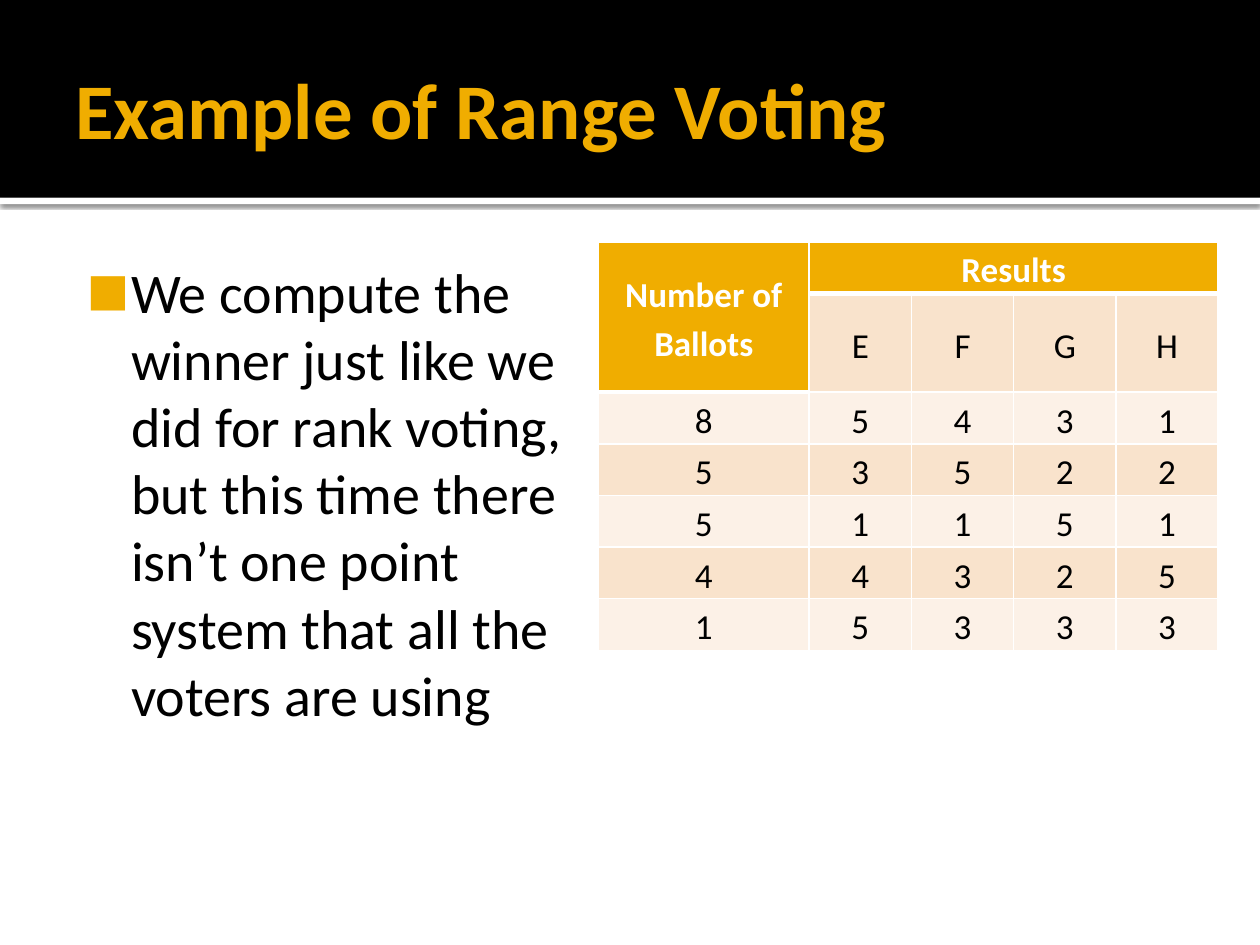
from dataclasses import dataclass
from typing import Any

import pptx
import pptx.dml.color
import pptx.enum.shapes
import pptx.enum.text
import pptx.oxml
import pptx.oxml.ns
import pptx.util

ALIGN = pptx.enum.text.PP_ALIGN
ANCHOR = pptx.enum.text.MSO_ANCHOR
RGB = pptx.dml.color.RGBColor.from_string
SLIDE_WIDTH = pptx.util.Inches(10)
SLIDE_HEIGHT = pptx.util.Inches(7.5)


@dataclass(frozen=True)
class Theme:
    font: str = "Calibri"
    accent: str = "F0AD00"
    dark: str = "000000"
    light: str = "FFFFFF"
    stripes: tuple[str, str] = ("FCF1E7", "F9E3CC")
    title_size: float = 45
    body_size: float = 32
    table_size: float = 20
    thin: float = 1
    thick: float = 3


@dataclass(frozen=True)
class Area:
    left: float
    top: float
    width: float
    height: float

    def emu(self) -> dict[str, int]:
        return {
            "left": round(self.left * SLIDE_WIDTH),
            "top": round(self.top * SLIDE_HEIGHT),
            "width": round(self.width * SLIDE_WIDTH),
            "height": round(self.height * SLIDE_HEIGHT),
        }


@dataclass(frozen=True)
class Band:
    area: Area
    color: str
    shadowed: bool


THEME = Theme()
HEADER_SHARE = 1.57 / 7.5
BANDS = (
    Band(Area(0, HEADER_SHARE, 1, 0.05 / 7.5), THEME.light, True),
    Band(Area(0, 0, 1, HEADER_SHARE), THEME.dark, False),
)
TITLE_AREA = Area(0.05, 0.17 / 7.5, 0.9, 1.37 / 7.5)
BODY_AREA = Area(0.05, 1.94 / 7.5, 0.892, 5.06 / 7.5)
TABLE_AREA = Area(0.475, 1.92 / 7.5, 0.492, 2.87 / 7.5)
COLUMN_SHARES = (0.34, 0.165, 0.165, 0.165, 0.165)

TITLE = "Example of Range Voting"
EXPLANATION = (
    "We compute the",
    "winner just like we",
    "did for rank voting,",
    "but this time there",
    "isn’t one point",
    "system that all the",
    "voters are using",
)
BALLOTS = (
    ("Number of Ballots", "Results", "", "", ""),
    ("", "E", "F", "G", "H"),
    ("8", "5", "4", "3", "1"),
    ("5", "3", "5", "2", "2"),
    ("5", "1", "1", "5", "1"),
    ("4", "4", "3", "2", "5"),
    ("1", "5", "3", "3", "3"),
)


def apply(target: Any, values: dict[str, Any]) -> None:
    for name, value in values.items():
        setattr(target, name, value)


def margins(left: float, top: float, right: float, bottom: float) -> dict[str, int]:
    sides = {"left": left, "top": top, "right": right, "bottom": bottom}
    return {f"margin_{side}": pptx.util.Inches(inset) for side, inset in sides.items()}


def element(markup: str) -> Any:
    return pptx.oxml.parse_xml(markup.replace(">", f" {pptx.oxml.ns.nsdecls('a')}>", 1))


def style_text(frame: Any, size: float, color: str, bold: bool, **layout: Any) -> None:
    for paragraph in frame.paragraphs:
        apply(paragraph, layout)
        for run in paragraph.runs:
            apply(run.font, {"name": THEME.font, "size": pptx.util.Pt(size), "bold": bold})
            run.font.color.rgb = RGB(color)


def draw_band(slide: Any, band: Band, depth: int) -> None:
    shape = slide.shapes.add_shape(
        pptx.enum.shapes.MSO_SHAPE.RECTANGLE, **band.area.emu()
    )
    shape.fill.solid()
    shape.fill.fore_color.rgb = RGB(band.color)
    shape.line.fill.background()
    shape.shadow.inherit = False
    if band.shadowed:
        effects = shape.element.spPr.find(pptx.oxml.ns.qn("a:effectLst"))
        effects.append(element(
            f'<a:outerShdw blurRad="{pptx.util.Pt(2.5)}" dist="{pptx.util.Pt(0.8)}" '
            f'dir="5400000" rotWithShape="0"><a:srgbClr val="{THEME.dark}">'
            '<a:alpha val="60000"/></a:srgbClr></a:outerShdw>'
        ))
    slide.shapes.element.insert(2 + depth, shape.element)


def fill_placeholder(placeholder: Any, area: Area, text: str, frame_format: dict[str, Any]) -> None:
    apply(placeholder, area.emu())
    frame = placeholder.text_frame
    frame.text = text
    apply(frame, {"auto_size": pptx.enum.text.MSO_AUTO_SIZE.NONE, "word_wrap": True})
    apply(frame, frame_format)


def add_bullet(paragraph: Any) -> None:
    properties = paragraph._p.get_or_add_pPr()
    apply(properties, {})
    properties.set("marL", str(pptx.util.Inches(0.48)))
    properties.set("indent", str(pptx.util.Inches(-0.35)))
    for markup in (
        f'<a:buClr><a:srgbClr val="{THEME.accent}"/></a:buClr>',
        '<a:buSzPct val="80000"></a:buSzPct>',
        f'<a:buFont typeface="{THEME.font}"></a:buFont>',
        '<a:buChar char="■"></a:buChar>',
    ):
        properties.append(element(markup))


def draw_cell(cell: Any, text: str, row: int, column: int) -> None:
    heading = row == 0 or (row, column) == (1, 0)
    cell.text = text
    apply(cell, {"vertical_anchor": ANCHOR.MIDDLE, **margins(0.07, 0, 0.07, 0)})
    style_text(
        cell.text_frame, THEME.table_size, THEME.light if heading else THEME.dark,
        heading, alignment=ALIGN.CENTER, line_spacing=1.15,
    )
    for side in "LRTB":
        width = THEME.thick if heading and side == "B" else THEME.thin
        cell._tc.get_or_add_tcPr().append(element(
            f'<a:ln{side} w="{pptx.util.Pt(width)}"><a:solidFill>'
            f'<a:srgbClr val="{THEME.light}"/></a:solidFill></a:ln{side}>'
        ))
    cell.fill.solid()
    cell.fill.fore_color.rgb = RGB(THEME.accent if heading else THEME.stripes[row % 2])


def draw_ballots(slide: Any) -> None:
    area = TABLE_AREA.emu()
    table = slide.shapes.add_table(len(BALLOTS), len(COLUMN_SHARES), **area).table
    for column, share in zip(table.columns, COLUMN_SHARES):
        column.width = round(share * area["width"])
    for row, values in enumerate(BALLOTS):
        for column, value in enumerate(values):
            draw_cell(table.cell(row, column), value, row, column)
    table.cell(0, 0).merge(table.cell(1, 0))
    table.cell(0, 1).merge(table.cell(0, len(COLUMN_SHARES) - 1))


def main() -> None:
    deck = pptx.Presentation()
    apply(deck, {"slide_width": SLIDE_WIDTH, "slide_height": SLIDE_HEIGHT})
    slide = deck.slides.add_slide(deck.slide_layouts[1])
    for depth, band in enumerate(BANDS):
        draw_band(slide, band, depth)

    heading = slide.shapes.title
    fill_placeholder(heading, TITLE_AREA, TITLE, {
        "vertical_anchor": ANCHOR.MIDDLE, **margins(0.1, 0.05, 0.05, 0.05),
    })
    style_text(heading.text_frame, THEME.title_size, THEME.accent, True, alignment=ALIGN.LEFT)

    explanation = slide.placeholders[1]
    fill_placeholder(explanation, BODY_AREA, "\v".join(EXPLANATION), {
        "vertical_anchor": ANCHOR.TOP, **margins(0.06, 0.1, 0.1, 0.05),
    })
    style_text(
        explanation.text_frame, THEME.body_size, THEME.dark, False,
        alignment=ALIGN.LEFT, space_before=pptx.util.Pt(0),
    )
    add_bullet(explanation.text_frame.paragraphs[0])
    draw_ballots(slide)
    deck.save("out.pptx")


if __name__ == "__main__":
    main()
